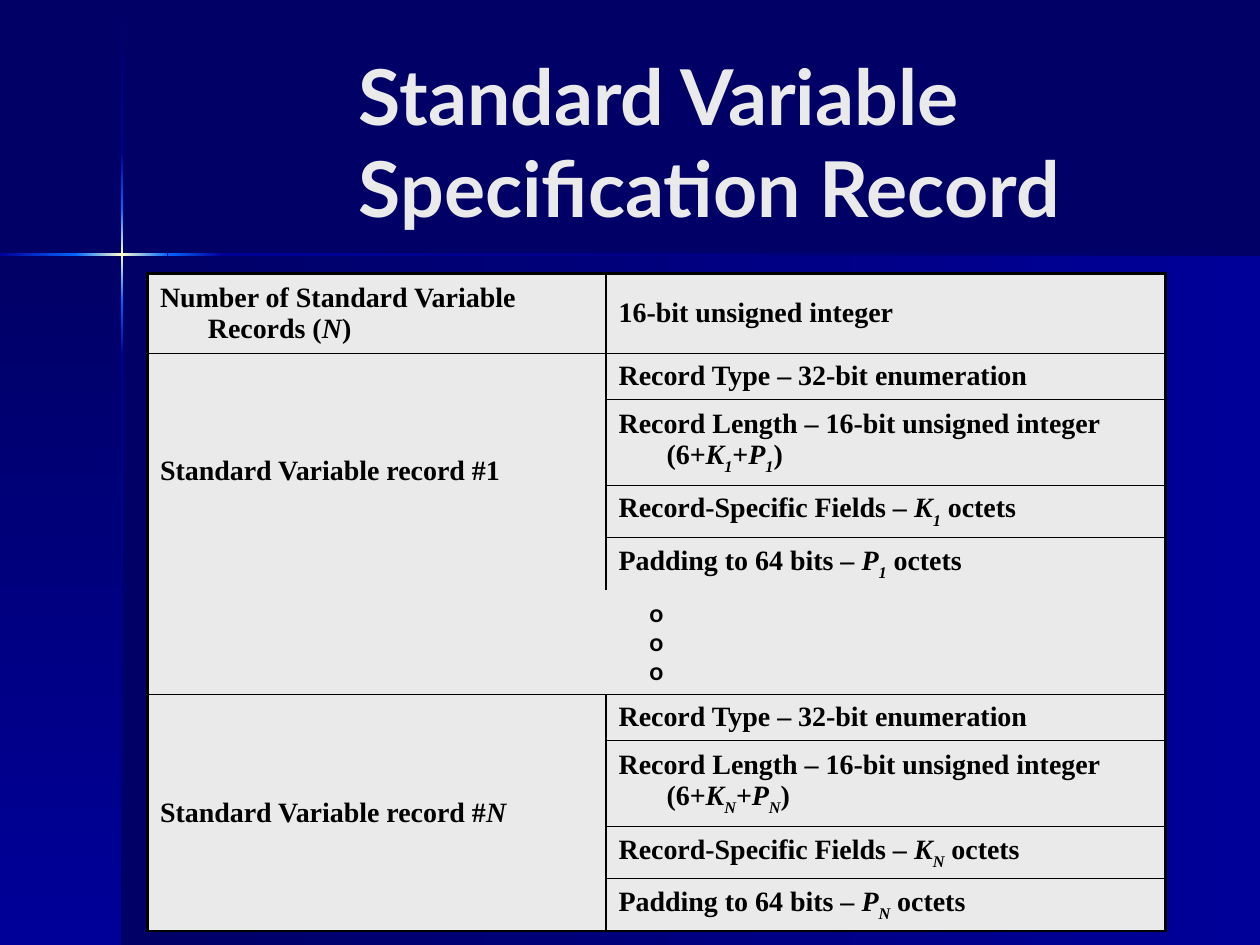
from pptx import Presentation
from pptx.dml.color import RGBColor
from pptx.enum import shapes, text
from pptx.oxml import parse_xml
from pptx.oxml.ns import nsdecls
from pptx.util import Inches, Pt
from copy import deepcopy

COLORS = {"navy": "000066", "blue": "000099", "bright": "0066FF",
          "glow": "FFFFCC", "pale": "EAEAEA", "black": "000000"}
SERIF, SANS = "Times New Roman", "Lato"
NO_STYLE = "{2D5ABB26-0587-4C30-8999-92F81FD0307C}"
DOWN, ACROSS = 270, 0  # gradient directions

# Left, top, width, height, direction, gradient colors
PANELS = [
    (0.97, 2.02, 9.03, 5.48, ACROSS, ["navy", "blue"]),
    (0, 2.02, 0.97, 5.48, DOWN, ["navy", "blue"]),
]
# Start, length, gradient colors along each beam of the star
VERTICAL_BEAM = [
    (0.01, 1.2, ["navy", "blue"]),
    (2.82, 4.68, ["blue", "navy"]),
    (2.38, 0.44, ["bright", "blue"]),
    (1.21, 0.44, ["blue", "bright"]),
    (1.65, 0.73, ["bright", "glow", "bright"]),
]
HORIZONTAL_BEAM = [
    (1.77, 8.23, ["blue", "navy"]),
    (0, 0.61, ["blue", "bright"]),
    (1.33, 0.44, ["bright", "blue"]),
    (0.6, 0.73, ["bright", "glow", "bright"]),
]
COLUMN_WIDTHS = [3.64, 4.44]
ROW_HEIGHTS = [0.59, 0.36, 0.64, 0.39, 0.39, 0.83, 0.36, 0.64, 0.4, 0.4]
DOTS_ROW = 5


def rgb(name):
    return RGBColor.from_string(COLORS[name])


def add_gradient_bar(slide, left, top, width, height, angle, colors):
    bar = slide.shapes.add_shape(shapes.MSO_SHAPE.RECTANGLE, Inches(left),
                                 Inches(top), Inches(width), Inches(height))
    bar.shadow.inherit = False
    bar.line.fill.background()
    bar.fill.gradient()
    bar.fill.gradient_angle = angle
    if len(colors) == 3:
        stop_list = bar._element.spPr.find(".//{*}gsLst")
        stop_list.append(deepcopy(stop_list[-1]))
    for i, (stop, color) in enumerate(zip(bar.fill.gradient_stops, colors)):
        stop.color.rgb = rgb(color)
        stop.position = i / (len(colors) - 1)


def add_run(paragraph, words, font, size, color, bold=True, style=""):
    run = paragraph.add_run()
    run.text = words
    run.font.name = font
    run.font.size = Pt(size)
    run.font.bold = bold
    run.font.color.rgb = rgb(color)
    run.font.italic = style in ("italic", "sub")
    if style == "sub":
        run.font._element.set("baseline", "-30000")


def add_title(slide, words):
    title = slide.shapes.add_textbox(Inches(2.75), Inches(0.33),
                                     Inches(6.92), Inches(1.57))
    frame = title.text_frame
    frame.word_wrap = True
    frame.vertical_anchor = text.MSO_ANCHOR.MIDDLE
    add_run(frame.paragraphs[0], words, SANS, 44, "pale")


def set_borders(cell, left, right, top, bottom):
    """Draw cell edges with widths in points; 0 means no line."""
    properties = cell._tc.get_or_add_tcPr()
    edges = zip(("lnL", "lnR", "lnT", "lnB"), (left, right, top, bottom))
    for i, (tag, width) in enumerate(edges):
        fill = (f'<a:solidFill><a:srgbClr val="{COLORS["black"]}"/></a:solidFill>'
                if width else "<a:noFill/>")
        properties.insert(i, parse_xml(
            f'<a:{tag} {nsdecls("a")} w="{Pt(width)}">{fill}</a:{tag}>'))


def fill_cell(cell, runs):
    paragraph = cell.text_frame.paragraphs[0]
    hanging = paragraph._p.get_or_add_pPr()
    hanging.set("marL", str(Inches(0.38)))
    hanging.set("indent", str(-Inches(0.38)))
    for words, style in runs:
        add_run(paragraph, words, SERIF, 16, "black", style=style)


def fill_dots(cell):
    frame = cell.text_frame
    for i in range(3):
        paragraph = frame.add_paragraph() if i else frame.paragraphs[0]
        paragraph.alignment = text.PP_ALIGN.CENTER
        add_run(paragraph, "o", SANS, 14, "black")


def fill_record(table, first_row, index, index_style):
    """Fill the four rows that describe one variable record."""
    k_size = [("K", "italic"), (index, "sub")]
    p_size = [("P", "italic"), (index, "sub")]
    fields = [
        [("Record Type – 32-bit enumeration", "")],
        [("Record Length – 16-bit unsigned integer (6+", ""), *k_size,
         ("+", ""), *p_size, (")", "")],
        [("Record-Specific Fields – ", ""), *k_size, (" octets", "")],
        [("Padding to 64 bits – ", ""), *p_size, (" octets", "")],
    ]
    label = table.cell(first_row, 0)
    label.merge(table.cell(first_row + len(fields) - 1, 0))
    fill_cell(label, [("Standard Variable record #", ""), (index, index_style)])
    for row, runs in enumerate(fields, first_row):
        fill_cell(table.cell(row, 1), runs)


def style_cells(table):
    for row in range(len(ROW_HEIGHTS)):
        for column in range(2):
            cell = table.cell(row, column)
            cell.fill.solid()
            cell.fill.fore_color.rgb = rgb("pale")
            cell.vertical_anchor = text.MSO_ANCHOR.MIDDLE
            if cell.is_spanned:
                continue
            last_row = row + cell.span_height - 1
            last_column = column + cell.span_width - 1
            set_borders(cell,
                        left=2 if column == 0 else 1,
                        right=2 if last_column == 1 else 1,
                        top=2 if row == 0 else 0 if row == DOTS_ROW else 1,
                        bottom=0 if last_row == DOTS_ROW - 1 else 1)


def add_record_table(slide):
    frame = slide.shapes.add_table(
        len(ROW_HEIGHTS), 2, Inches(1.17), Inches(2.17),
        Inches(sum(COLUMN_WIDTHS)), Inches(sum(ROW_HEIGHTS)))
    table = frame.table
    table.first_row = table.horz_banding = False
    table._tbl.tblPr.find("{*}tableStyleId").text = NO_STYLE
    for column, width in zip(table.columns, COLUMN_WIDTHS):
        column.width = Inches(width)
    for row, height in zip(table.rows, ROW_HEIGHTS):
        row.height = Inches(height)

    fill_cell(table.cell(0, 0), [("Number of Standard Variable Records (", ""),
                                 ("N", "italic"), (")", "")])
    fill_cell(table.cell(0, 1), [("16-bit unsigned integer", "")])
    fill_record(table, 1, "1", "")
    table.cell(DOTS_ROW, 0).merge(table.cell(DOTS_ROW, 1))
    fill_dots(table.cell(DOTS_ROW, 0))
    fill_record(table, DOTS_ROW + 1, "N", "italic")
    style_cells(table)


def main():
    deck = Presentation()
    deck.slide_width, deck.slide_height = Inches(10), Inches(7.5)
    slide = deck.slides.add_slide(deck.slide_layouts[6])

    # Background panels and star beams
    slide.background.fill.solid()
    slide.background.fill.fore_color.rgb = rgb("navy")
    for panel in PANELS:
        add_gradient_bar(slide, *panel)
    for top, length, colors in VERTICAL_BEAM:
        add_gradient_bar(slide, 0.96, top, 0.02, length, DOWN, colors)
    for left, length, colors in HORIZONTAL_BEAM:
        add_gradient_bar(slide, left, 2.01, length, 0.02, ACROSS, colors)

    # Content
    add_title(slide, "Standard Variable Specification Record")
    add_record_table(slide)
    deck.save("out.pptx")


if __name__ == "__main__":
    main()
